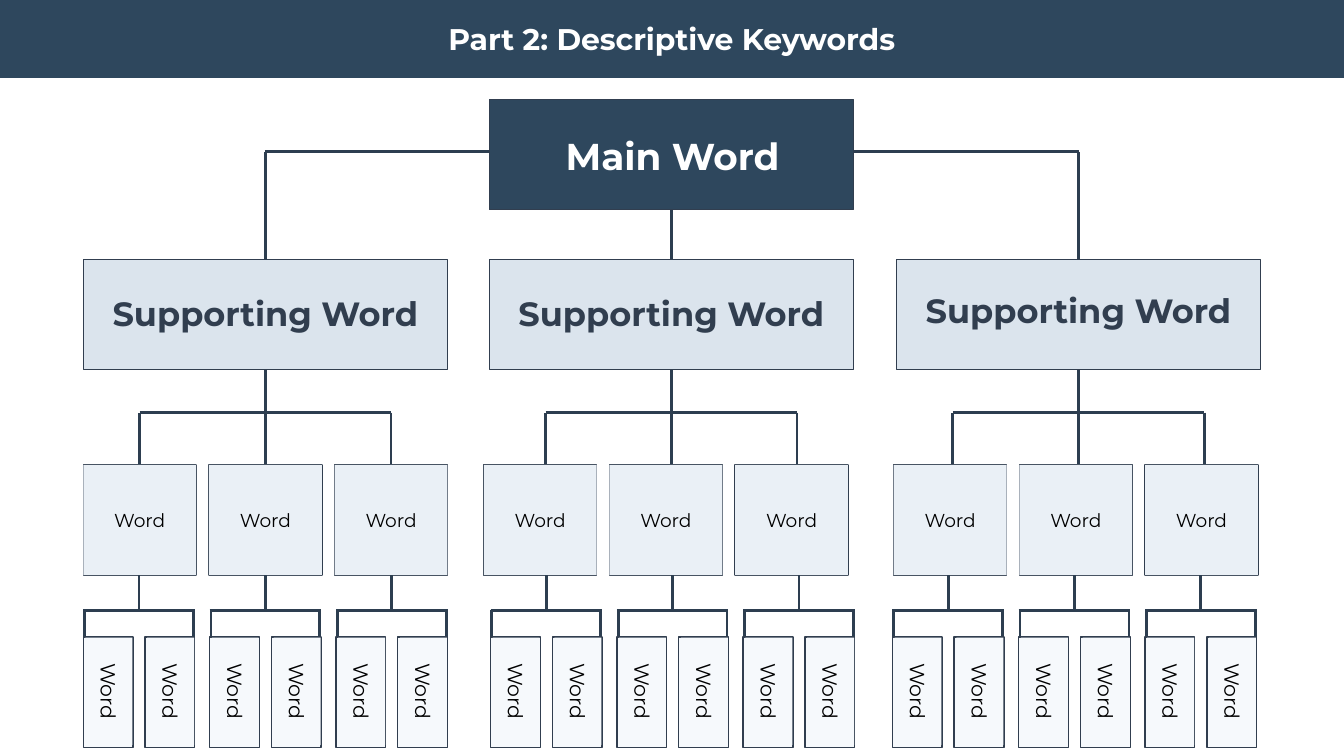
from pptx import Presentation
from pptx.dml.color import RGBColor
from pptx.enum.shapes import MSO_CONNECTOR as CONN, MSO_SHAPE as SHAPE
from pptx.enum.text import MSO_ANCHOR as ANCHOR, PP_ALIGN as ALIGN
from pptx.oxml.ns import qn
from pptx.util import Inches, Pt
from lxml import etree

# Content: each branch has a supporting word, and words with their two leaves
TITLE = "Part 2: Descriptive Keywords"
MAIN = "Main Word"
WORDS = [("Word", ("Word", "Word"))] * 3
BRANCHES = [
    dict(text="Supporting Word", x=0.62, text_y=2.08, stem_y=1.55,
         words_x=0.62, leaves_x=0.62, words=WORDS),
    dict(text="Supporting Word", x=3.64, text_y=2.08, stem_y=1.55,
         words_x=3.6, leaves_x=3.65, words=WORDS),
    dict(text="Supporting Word", x=6.67, text_y=2.06, stem_y=2.57,
         words_x=6.65, leaves_x=6.64, words=WORDS),
]

# Style and grid, in inches
FONT = "Montserrat"
NAVY, INK, LINE = "2E475D", "313E4F", "2D3E50"
PALE, PALER, PALEST = "DBE4ED", "EAF0F6", "F6F9FC"
WHITE, BLACK = "FFFFFF", "000000"
BOX_W, BOX_H = 2.71, 0.82
WORD_W, LEAF_W, LEAF_PITCH, PAIR_W = 0.84, 0.37, 0.46, 0.83
WORD_PITCH = (BOX_W - WORD_W) / 2
PAIR_PITCH = (BOX_W - PAIR_W) / 2
MAIN_X, MAIN_Y, SUPPORT_Y, WORD_Y, LEAF_Y = 3.64, 0.74, 1.93, 3.46, 4.74
ELBOW_Y, FORK_Y, BRACKET_Y = 1.13, 3.07, 4.54

prs = Presentation()
prs.slide_width = Inches(10)
prs.slide_height = prs.slide_width * 9 // 16
s = prs.slides.add_slide(prs.slide_layouts[6])


def rgb(color):
    return RGBColor.from_string(color)


def write(sp, text, size, color, bold=False, anchor=ANCHOR.MIDDLE, side=0.1):
    tf = sp.text_frame
    tf.text = text
    tf.word_wrap = True
    tf.vertical_anchor = anchor
    tf.margin_left = tf.margin_right = Inches(side)
    tf.margin_top = tf.margin_bottom = Inches(0.1)
    p = tf.paragraphs[0]
    p.alignment = ALIGN.CENTER
    font = p.runs[0].font
    font.name, font.size, font.bold = FONT, Pt(size), bold
    font.color.rgb = rgb(color)


def box(x, y, w, h, fill, outlined=False):
    sp = s.shapes.add_shape(SHAPE.RECTANGLE, *map(Inches, (x, y, w, h)))
    sp.shadow.inherit = False
    sp.fill.solid()
    sp.fill.fore_color.rgb = rgb(fill)
    if outlined:
        sp.line.color.rgb = rgb(INK)
        sp.line.width = Pt(0.75)
    else:
        sp.line.fill.background()
    return sp


def heading(x, y, h, text, size, color):
    sp = s.shapes.add_textbox(*map(Inches, (x, y, 2.63, h)))
    write(sp, text, size, color, bold=True, anchor=ANCHOR.TOP)


def line(x1, y1, x2, y2):
    cx = s.shapes.add_connector(CONN.STRAIGHT, *map(Inches, (x1, y1, x2, y2)))
    cx.line.color.rgb = rgb(LINE)
    cx.line.width = Pt(1.5)
    etree.SubElement(cx._element.spPr, qn("a:effectLst"))


# Title bar
write(box(0, 0, 10, 0.58, NAVY), TITLE, 16, WHITE, bold=True)

# Stems, behind the boxes
for b in BRANCHES:
    center = b["x"] + BOX_W / 2
    line(center, b["stem_y"], center, WORD_Y)

# Main word, with an elbow to each outer branch
box(MAIN_X, MAIN_Y, BOX_W, BOX_H, NAVY, outlined=True)
heading(3.69, 0.89, 0.46, MAIN, 20, WHITE)
for b, edge in ((BRANCHES[0], MAIN_X), (BRANCHES[-1], MAIN_X + BOX_W)):
    center = b["x"] + BOX_W / 2
    line(edge, ELBOW_Y, center, ELBOW_Y)
    line(center, ELBOW_Y, center, SUPPORT_Y)

for b in BRANCHES:
    # Supporting word
    center = b["x"] + BOX_W / 2
    box(b["x"], SUPPORT_Y, BOX_W, BOX_H, PALE, outlined=True)
    heading(b["x"] + 0.04, b["text_y"], 0.58, b["text"], 18, INK)

    # Fork down to the outer words
    left, right = center - WORD_PITCH, center + WORD_PITCH
    line(left, FORK_Y, right, FORK_Y)
    for x in (left, right):
        line(x, FORK_Y, x, WORD_Y)

    for i, (word, leaves) in enumerate(b["words"]):
        # Word card
        x = b["words_x"] + i * WORD_PITCH
        box(x, WORD_Y, WORD_W, BOX_H, WHITE, outlined=True)
        write(box(x, WORD_Y, WORD_W, BOX_H, PALER), word, 10, BLACK)

        # Bracket over the pair of leaves
        x = b["leaves_x"] + i * PAIR_PITCH
        line(x + PAIR_W / 2, WORD_Y + BOX_H, x + PAIR_W / 2, BRACKET_Y)
        line(x, BRACKET_Y, x + PAIR_W, BRACKET_Y)
        for end in (x + 0.01, x + PAIR_W - 0.01):
            line(end, BRACKET_Y, end, LEAF_Y)

        # Leaves, with their labels turned to read downwards
        for j, leaf in enumerate(leaves):
            leaf_x = x + j * LEAF_PITCH
            box(leaf_x, LEAF_Y, LEAF_W, BOX_H, PALEST, outlined=True)
            label = box(leaf_x - 0.21, LEAF_Y + 0.23, 0.8, 0.35, PALEST)
            label.rotation = 90
            write(label, leaf, 11, BLACK, side=0.05)

prs.save("out.pptx")
